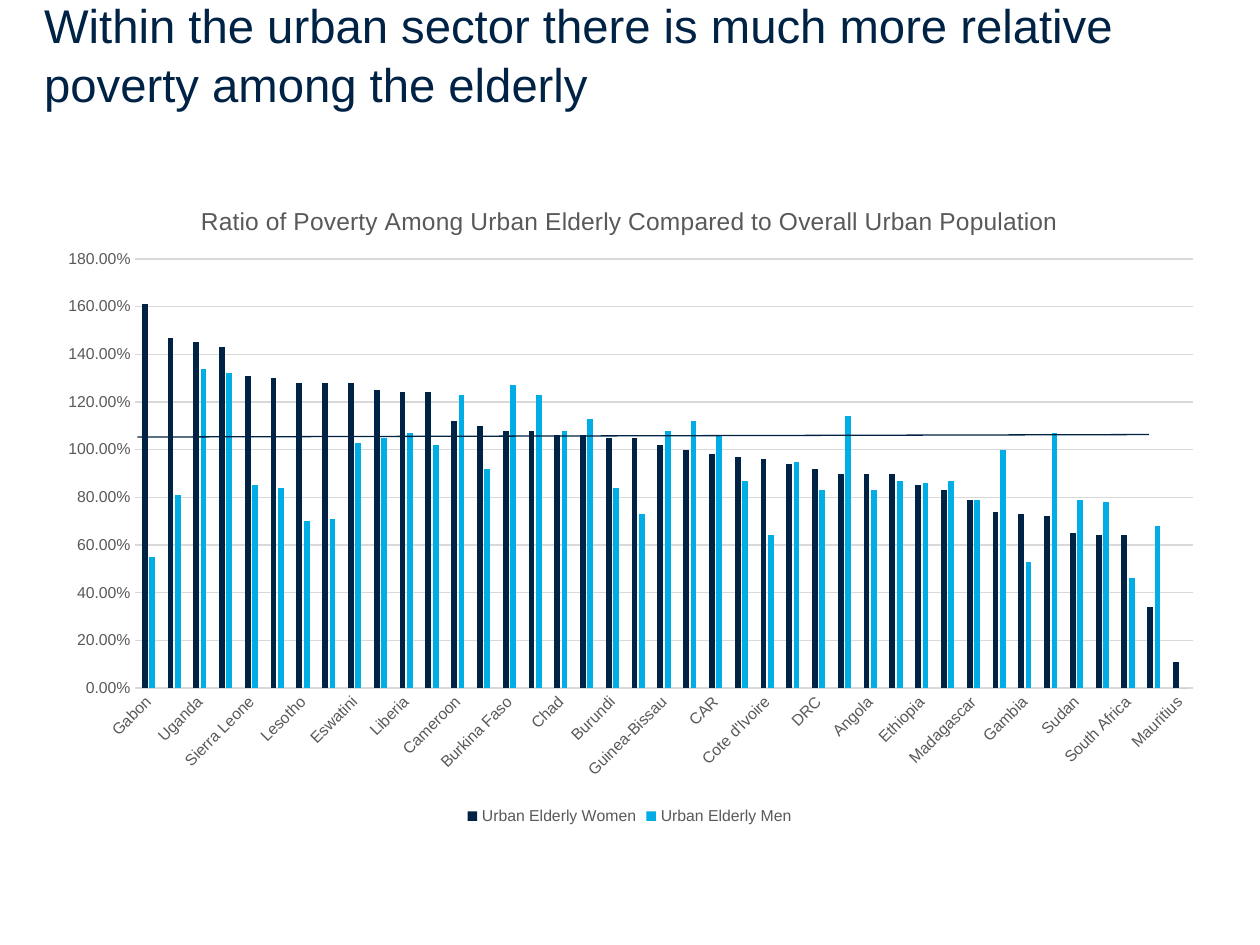
from lxml.etree import SubElement
from pptx import Presentation
from pptx.chart.data import CategoryChartData
from pptx.dml.color import RGBColor
from pptx.enum.chart import XL_CHART_TYPE as ChartType, XL_LEGEND_POSITION as LegendSpot
from pptx.enum.chart import XL_TICK_MARK as TickMark
from pptx.enum.shapes import MSO_CONNECTOR as Connector
from pptx.enum.text import MSO_ANCHOR as Anchor, MSO_AUTO_SIZE as AutoSize, PP_ALIGN as Align
from pptx.oxml import parse_xml
from pptx.oxml.ns import nsdecls, qn
from pptx.util import Cm, Pt

# Content
HEADLINE = "Within the urban sector there is much more relative poverty among the elderly"
CHART_TITLE = "Ratio of Poverty Among Urban Elderly Compared to Overall Urban Population"
SERIES = ("Urban Elderly Women", "Urban Elderly Men")
RATIOS = [
    ("Gabon", 1.61, 0.55), ("Namibia", 1.47, 0.81), ("Uganda", 1.45, 1.34),
    ("Zambia", 1.43, 1.32), ("Sierra Leone", 1.31, 0.85), ("Togo", 1.3, 0.84),
    ("Lesotho", 1.28, 0.7), ("Malawi", 1.28, 0.71), ("Eswatini", 1.28, 1.03),
    ("Congo", 1.25, 1.05), ("Liberia", 1.24, 1.07), ("Kenya", 1.24, 1.02),
    ("Cameroon", 1.12, 1.23), ("Sao Tome", 1.1, 0.92), ("Burkina Faso", 1.08, 1.27),
    ("Guinea", 1.08, 1.23), ("Chad", 1.06, 1.08), ("Botswana", 1.06, 1.13),
    ("Burundi", 1.05, 0.84), ("Tanzania", 1.05, 0.73), ("Guinea-Bissau", 1.02, 1.08),
    ("Mauritania", 1, 1.12), ("CAR", 0.98, 1.06), ("Senegal", 0.97, 0.87),
    ("Cote d'Ivoire", 0.96, 0.64), ("Mozambique", 0.94, 0.95), ("DRC", 0.92, 0.83),
    ("Ghana", 0.9, 1.14), ("Angola", 0.9, 0.83), ("Rwanda", 0.9, 0.87),
    ("Ethiopia", 0.85, 0.86), ("Benin", 0.83, 0.87), ("Madagascar", 0.79, 0.79),
    ("Comoros", 0.74, 1), ("Gambia", 0.73, 0.53), ("Niger", 0.72, 1.07),
    ("Sudan", 0.65, 0.79), ("Nigeria", 0.64, 0.78), ("South Africa", 0.64, 0.46),
    ("Cape Verde", 0.34, 0.68), ("Mauritius", 0.11, 0),
]
COLORS = {"navy": "002345", "cyan": "00ADE4", "gray": "595959", "grid": "D9D9D9",
          "rule": "002243"}
FONT = "Arial"
LEFT, WIDTH = Cm(0.89), Cm(23.6)


def color(name):
    return RGBColor.from_string(COLORS[name])


def style_font(font, size, shade):
    font.name, font.size, font.bold = FONT, Pt(size), False
    font.color.rgb = color(shade)


def style_line(line, shade):
    line.color.rgb = color(shade)
    line.width = Pt(0.75)


def write(frame, text, size=14, shade="gray", align=None, spacing=None):
    para = frame.paragraphs[0]
    para.alignment, para.line_spacing = align, spacing
    span = para.add_run()
    span.text = text
    style_font(span.font, size, shade)


def place(part, index, **settings):
    """Give a chart part a fixed layout, as fractions of the chart."""
    for old in part.findall(qn("c:layout")):
        part.remove(old)
    layout = parse_xml(f"<c:layout {nsdecls('c')}><c:manualLayout/></c:layout>")
    for tag, value in settings.items():
        SubElement(layout[0], qn(f"c:{tag}")).set("val", str(value))
    part.insert(index, layout)


deck = Presentation()
deck.slide_width, deck.slide_height = Cm(25.4), Cm(19.05)
page = deck.slides.add_slide(deck.slide_layouts[5])

# Headline
box = page.shapes.title
box.left, box.top, box.width, box.height = LEFT, Cm(0.71), WIDTH, Cm(1.6)
frame = box.text_frame
frame.margin_left = frame.margin_right = frame.margin_top = 0
frame.margin_bottom = Cm(0.05)
frame.word_wrap, frame.auto_size = True, AutoSize.NONE
frame.vertical_anchor = Anchor.BOTTOM
write(frame, HEADLINE, size=27, shade="navy", align=Align.LEFT, spacing=1.05)

# Chart
countries, *columns = zip(*RATIOS)
data = CategoryChartData(number_format="0.00%")
data.categories = countries
for name, values in zip(SERIES, columns):
    data.add_series(name, values)
chart = page.shapes.add_chart(ChartType.COLUMN_CLUSTERED, LEFT, Cm(3.53), WIDTH, Cm(13.21),
                              data).chart
chart.font.name, chart.font.size = FONT, Pt(10)
chart.has_title = True
write(chart.chart_title.text_frame, CHART_TITLE)
chart.chart_title.include_in_layout = False
place(chart.chart_title.format and chart.chart_title._element, 1,
      xMode="edge", yMode="edge", x=0.13, y=0.04)

plot = chart.plots[0]
plot.gap_width, plot.overlap, plot.vary_by_categories = 219, -27, False
for series, shade in zip(plot.series, ("navy", "cyan")):
    series.format.fill.solid()
    series.format.fill.fore_color.rgb = color(shade)
    series.invert_if_negative = False
place(chart._chartSpace.chart.plotArea, 0, layoutTarget="inner", xMode="edge", yMode="edge",
      x=0.078, y=0.128, w=0.903, h=0.655)

# Axes and legend
for axis in (chart.category_axis, chart.value_axis):
    axis.major_tick_mark = axis.minor_tick_mark = TickMark.NONE
    style_font(axis.tick_labels.font, 9, "gray")
style_line(chart.category_axis.format.line, "grid")
chart.category_axis._element.txPr.find(qn("a:bodyPr")).set("rot", "-2700000")
ratio_axis = chart.value_axis
ratio_axis.minimum_scale, ratio_axis.maximum_scale, ratio_axis.major_unit = 0, 1.8, 0.2
ratio_axis.tick_labels.number_format = "0.00%"
ratio_axis.tick_labels.number_format_is_linked = False
ratio_axis.format.line.fill.background()
style_line(ratio_axis.major_gridlines.format.line, "grid")
chart.has_legend = True
chart.legend.position, chart.legend.include_in_layout = LegendSpot.BOTTOM, False
style_font(chart.legend.font, 9, "gray")

# Reference line
rule = page.shapes.add_connector(Connector.STRAIGHT, Cm(2.77), Cm(8.81), Cm(23.16), Cm(8.76))
style_line(rule.line, "rule")
SubElement(rule._element.spPr, qn("a:effectLst"))

deck.save("out.pptx")
